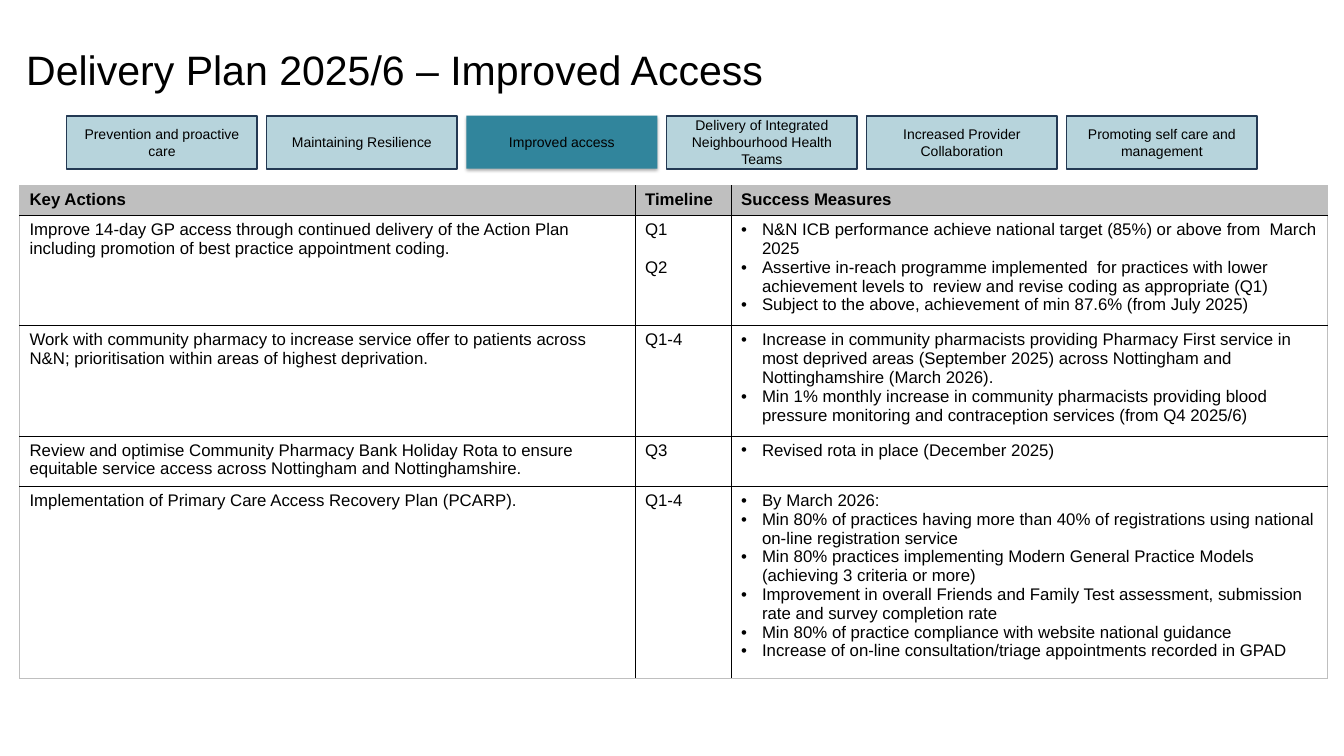
from dataclasses import dataclass

from lxml.etree import SubElement
from pptx import Presentation
from pptx.dml.color import RGBColor
from pptx.enum.shapes import MSO_SHAPE as Shape
from pptx.enum.text import MSO_ANCHOR as Anchor, PP_ALIGN as Align
from pptx.oxml import parse_xml
from pptx.oxml.ns import nsdecls, qn
from pptx.util import Inches, Pt


@dataclass(frozen=True)
class Theme:
    font: str = "Arial"
    title_size: int = 44
    tab_size: int = 15
    table_size: int = 18
    text: str = "000000"
    teal: str = "31859C"
    navy: str = "233953"
    grey: str = "BFBFBF"
    rule: str = "000000"


@dataclass(frozen=True)
class Priority:
    label: str
    active: bool = False


@dataclass(frozen=True)
class Action:
    action: str
    timeline: tuple[str, ...]
    measures: tuple[str, ...]
    height: float


THEME = Theme()

# Content
PRIORITIES = [
    Priority("Prevention and proactive care"),
    Priority("Maintaining Resilience"),
    Priority("Improved access", active=True),
    Priority("Delivery of Integrated Neighbourhood Health Teams"),
    Priority("Increased Provider Collaboration"),
    Priority("Promoting self care and management"),
]
HEADINGS = ("Key Actions", "Timeline", "Success Measures")
ACTIONS = [
    Action(
        "Improve 14-day GP access through continued delivery of the Action Plan "
        "including promotion of best practice appointment coding.",
        ("Q1", "Q2"),
        ("N&N ICB performance achieve national target (85%) or above from  March 2025",
         "Assertive in-reach programme implemented  for practices with lower "
         "achievement levels to  review and revise coding as appropriate (Q1)",
         "Subject to the above, achievement of min 87.6% (from July 2025)"),
        1.54),
    Action(
        "Work with community pharmacy to increase service offer to patients across "
        "N&N; prioritisation within areas of highest deprivation.",
        ("Q1-4",),
        ("Increase in community pharmacists providing Pharmacy First service in most "
         "deprived areas (September 2025) across Nottingham and Nottinghamshire "
         "(March 2026).",
         "Min 1% monthly increase in community pharmacists providing blood pressure "
         "monitoring and contraception services (from Q4 2025/6)"),
        1.54),
    Action(
        "Review and optimise Community Pharmacy Bank Holiday Rota to ensure equitable "
        "service access across Nottingham and Nottinghamshire.",
        ("Q3",),
        ("Revised rota in place (December 2025)",),
        0.75),
    Action(
        "Implementation of Primary Care Access Recovery Plan (PCARP).",
        ("Q1-4",),
        ("By March 2026:",
         "Min 80% of practices having more than 40% of registrations using national "
         "on-line registration service",
         "Min 80% practices implementing Modern General Practice Models (achieving 3 "
         "criteria or more)",
         "Improvement in overall Friends and Family Test assessment, submission rate "
         "and survey completion rate",
         "Min 80% of practice compliance with website national guidance",
         "Increase of on-line consultation/triage appointments recorded in GPAD"),
        2.85),
]

# Layout in inches
LEFT = 0.29
TAB_LEFT, TAB_TOP, TAB_STEP, TAB_WIDTH, TAB_HEIGHT = 0.99, 1.72, 2.976, 2.84, 0.79
TABLE_TOP, HEADER_HEIGHT = 2.76, 0.45
COLUMN_WIDTHS = (9.16, 1.43, 8.88)


def style_text(frame, size: int, bold: bool = False) -> None:
    for paragraph in frame.paragraphs:
        for run in paragraph.runs:
            run.font.name = THEME.font
            run.font.size = Pt(size)
            run.font.bold = bold
            run.font.color.rgb = RGBColor.from_string(THEME.text)


def add_title(slide, text: str) -> None:
    title = slide.shapes.add_textbox(
        Inches(LEFT), Inches(-0.06), Inches(17.25), Inches(2.17))
    frame = title.text_frame
    frame.word_wrap = True
    frame.vertical_anchor = Anchor.MIDDLE
    frame.text = text
    style_text(frame, THEME.title_size)


def add_tab(slide, priority: Priority, index: int) -> None:
    tab = slide.shapes.add_shape(
        Shape.RECTANGLE, Inches(TAB_LEFT + index * TAB_STEP), Inches(TAB_TOP),
        Inches(TAB_WIDTH), Inches(TAB_HEIGHT))
    tab.shadow.inherit = False
    tab.fill.solid()
    tab.fill.fore_color.rgb = RGBColor.from_string(THEME.teal)
    properties = tab.element.spPr
    if priority.active:
        tab.line.fill.background()
        properties.find(qn("a:effectLst")).append(parse_xml(
            f'<a:outerShdw {nsdecls("a")} blurRad="{Pt(3.5)}" dist="{Pt(2.2)}" '
            'dir="5400000" rotWithShape="0"><a:srgbClr val="000000">'
            '<a:alpha val="32000"/></a:srgbClr></a:outerShdw>'))
    else:
        tab.line.color.rgb = RGBColor.from_string(THEME.navy)
        tab.line.width = Pt(2)
        tint = properties.find(qn("a:solidFill")).find(qn("a:srgbClr"))
        SubElement(tint, qn("a:alpha"), val="35000")
    frame = tab.text_frame
    frame.word_wrap = True
    frame.vertical_anchor = Anchor.MIDDLE
    frame.text = priority.label
    frame.paragraphs[0].alignment = Align.CENTER
    style_text(frame, THEME.tab_size)


def add_bullet(paragraph) -> None:
    properties = paragraph._p.get_or_add_pPr()
    properties.set("marL", str(Inches(0.31)))
    properties.set("indent", str(Inches(-0.31)))
    SubElement(properties, qn("a:buFont"), typeface=THEME.font)
    SubElement(properties, qn("a:buChar"), char="•")


def set_borders(cell, outer_sides: set[str]) -> None:
    properties = cell._tc.get_or_add_tcPr()
    for side in "LRTB":
        color = THEME.grey if side in outer_sides else THEME.rule
        properties.append(parse_xml(
            f'<a:ln{side} {nsdecls("a")} w="{Pt(1)}"><a:solidFill>'
            f'<a:srgbClr val="{color}"/></a:solidFill></a:ln{side}>'))


def fill_cell(cell, lines: tuple[str, ...], outer_sides: set[str],
              header: bool = False, bulleted: bool = False) -> None:
    cell.margin_left = cell.margin_right = Inches(0.15)
    cell.margin_top = cell.margin_bottom = Inches(0.07)
    set_borders(cell, outer_sides)
    if header:
        cell.fill.solid()
        cell.fill.fore_color.rgb = RGBColor.from_string(THEME.grey)
    else:
        cell.fill.background()
    frame = cell.text_frame
    frame.text = "\n".join(lines)
    for number, paragraph in enumerate(frame.paragraphs):
        if bulleted:
            add_bullet(paragraph)
        elif number:
            paragraph.space_before = Pt(20)
    style_text(frame, THEME.table_size, bold=header)


def add_plan(slide) -> None:
    heights = [HEADER_HEIGHT] + [action.height for action in ACTIONS]
    plan = slide.shapes.add_table(
        len(heights), len(COLUMN_WIDTHS), Inches(LEFT), Inches(TABLE_TOP),
        Inches(sum(COLUMN_WIDTHS)), Inches(sum(heights))).table
    plan.horz_banding = False
    for column, width in zip(plan.columns, COLUMN_WIDTHS):
        column.width = Inches(width)
    for row, height in zip(plan.rows, heights):
        row.height = Inches(height)

    rows = [[(heading,) for heading in HEADINGS]]
    rows += [[(item.action,), item.timeline, item.measures] for item in ACTIONS]
    last_row, last_column = len(rows) - 1, len(HEADINGS) - 1
    for r, row in enumerate(rows):
        for c, lines in enumerate(row):
            edges = {"L": c == 0, "R": c == last_column, "T": r == 0, "B": r == last_row}
            outer_sides = {side for side, is_outer in edges.items() if is_outer}
            fill_cell(plan.cell(r, c), lines, outer_sides, header=r == 0,
                      bulleted=r > 0 and c == last_column)


def main() -> None:
    deck = Presentation()
    deck.slide_width, deck.slide_height = Inches(20), Inches(11.25)
    slide = deck.slides.add_slide(deck.slide_layouts[6])
    add_title(slide, "Delivery Plan 2025/6 – Improved Access")
    for index, priority in enumerate(PRIORITIES):
        add_tab(slide, priority, index)
    add_plan(slide)
    deck.save("out.pptx")


if __name__ == "__main__":
    main()
